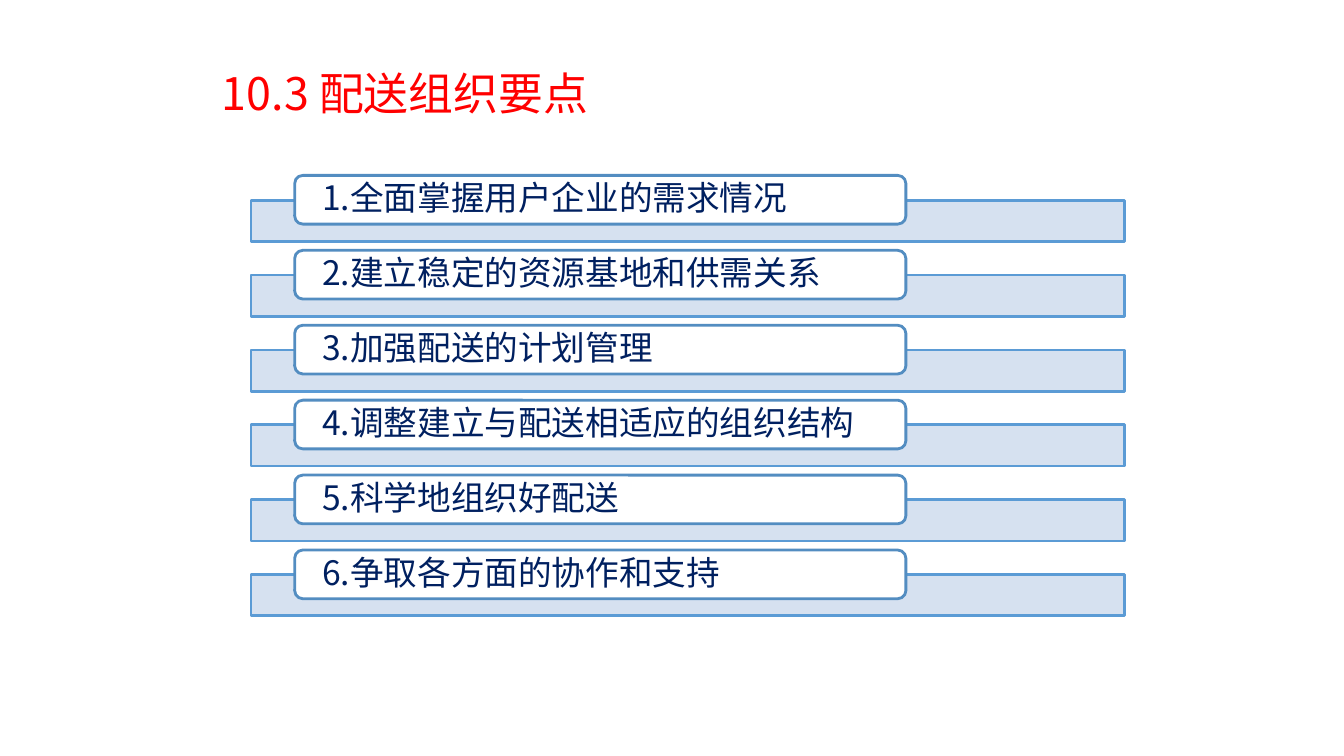
from lxml.etree import SubElement
from pptx import Presentation
from pptx.dml.color import RGBColor
from pptx.enum.shapes import MSO_SHAPE as Kind
from pptx.enum.text import MSO_ANCHOR as Anchor, MSO_AUTO_SIZE as Fit, PP_ALIGN as Align
from pptx.oxml.ns import qn
from pptx.util import Inches, Pt

TITLE = "10.3 配送组织要点"
POINTS = [
    "1.全面掌握用户企业的需求情况",
    "2.建立稳定的资源基地和供需关系",
    "3.加强配送的计划管理",
    "4.调整建立与配送相适应的组织结构",
    "5.科学地组织好配送",
    "6.争取各方面的协作和支持",
]


def tint(color, code):
    """Set a colour from a hex string."""
    color.rgb = RGBColor.from_string(code)


def write(shape, text, face, size, code):
    """Write one left-aligned line in a shape."""
    frame = shape.text_frame
    frame.text = text
    frame.word_wrap = True
    frame.auto_size = Fit.NONE
    frame.vertical_anchor = Anchor.MIDDLE
    line = frame.paragraphs[0]
    line.alignment = Align.LEFT
    line.line_spacing = 0.9
    font = line.runs[0].font
    font.size = Pt(size)
    font.name = face
    tint(font.color, code)
    SubElement(line.runs[0]._r.rPr, qn("a:ea"), typeface=face)


def panel(slide, kind, box, fill, edge):
    """Draw a filled shape with an outline."""
    shape = slide.shapes.add_shape(kind, *map(Inches, box))
    shape.shadow.inherit = False
    shape.fill.solid()
    tint(shape.fill.fore_color, fill)
    shape.line.width = Pt(2)
    tint(shape.line.color, edge)
    return shape


def head(slide, box):
    """Place the title."""
    title = slide.shapes.title
    title.left, title.top, title.width, title.height = map(Inches, box)
    write(title, TITLE, "Noto Sans CJK JP", 32, "FF0000")


def point(slide, text, box):
    """Draw one point as a label over a bar."""
    x, y, wide, high = box
    bar = panel(slide, Kind.RECTANGLE, (x, y + high * 0.33, wide, high * 0.55), "D2DEEF", "5B9BD5")
    hue = bar.fill._xPr.find(qn("a:solidFill"))[0]
    SubElement(hue, qn("a:alpha"), val="90000")
    place = x + wide * 0.05, y, wide * 0.7, high * 0.65
    label = panel(slide, Kind.ROUNDED_RECTANGLE, place, "FFFFFF", "538DC1")
    frame = label.text_frame
    frame.margin_left = frame.margin_right = Inches(0.25)
    frame.margin_top = frame.margin_bottom = 0
    write(label, text, "Noto Sans CJK SC", 24, "002060")


def stack(slide, box):
    """Stack the points in equal rows."""
    x, y, wide, high = box
    row = high / len(POINTS)
    for i, text in enumerate(POINTS):
        point(slide, text, (x, y + i * row, wide, row))


def main():
    """Build and save the slide."""
    deck = Presentation()
    deck.slide_width, deck.slide_height = Inches(13.33), Inches(7.5)
    slide = deck.slides.add_slide(deck.slide_layouts[5])
    head(slide, (2.1, 0.44, 7.36, 1.03))
    stack(slide, (2.49, 1.74, 8.66, 4.46))
    deck.save("out.pptx")


if __name__ == "__main__":
    main()
